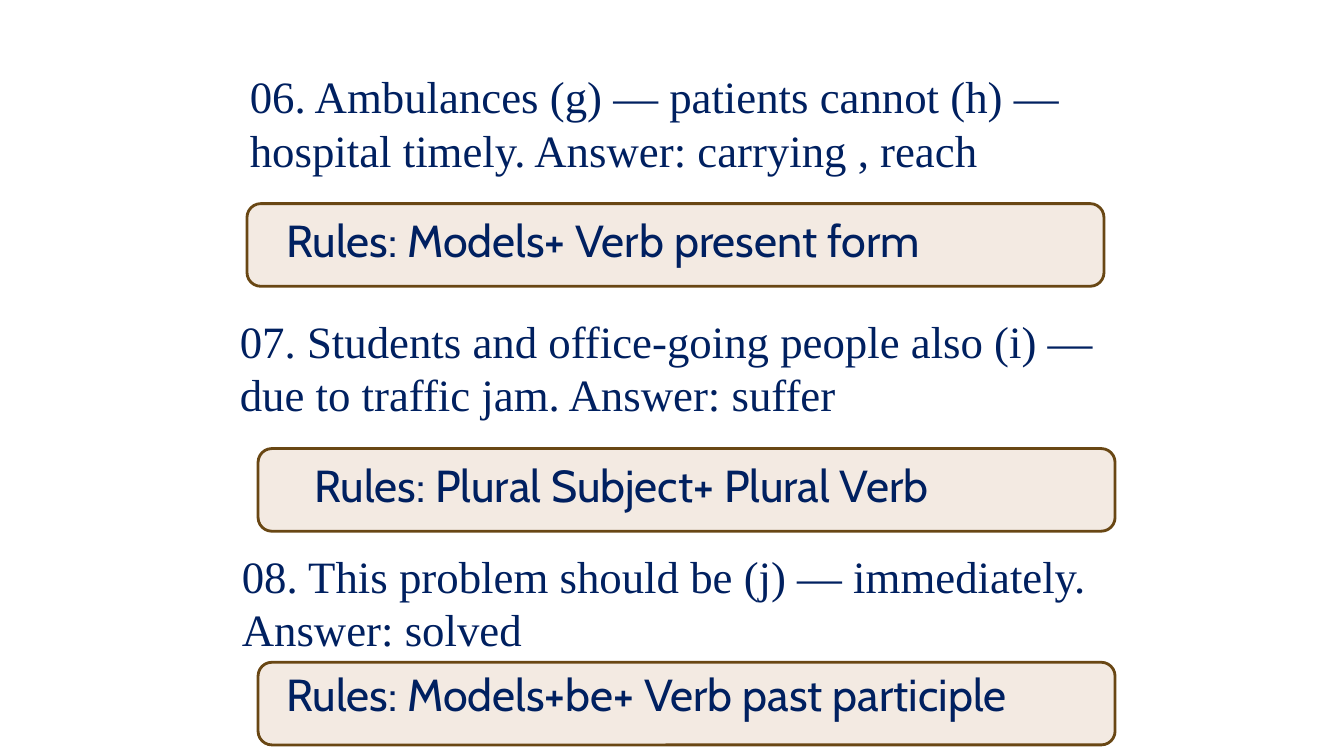
"""Build a grammar slide with three questions, each followed by its rule."""
from dataclasses import dataclass

from pptx import Presentation
from pptx.dml.color import RGBColor
from pptx.enum.shapes import MSO_SHAPE as Shape
from pptx.enum.text import MSO_AUTO_SIZE as AutoSize
from pptx.slide import Slide
from pptx.util import Inches, Pt

NAVY = "002060"
CREAM = "F3EAE2"
BROWN = "694714"
PANEL_WIDTH, PANEL_HEIGHT = 8.5, 0.82
QUESTION_HEIGHT, RULE_HEIGHT = 1.18, 0.64


@dataclass(frozen=True)
class Box:
    left: float
    top: float
    width: float
    height: float


@dataclass(frozen=True)
class Exercise:
    question: str
    question_box: Box
    panel_box: Box
    rule: str
    rule_box: Box


EXERCISES = [
    Exercise(
        "06. Ambulances (g) — patients cannot (h) — hospital timely. Answer: carrying , reach",
        Box(2.38, 0.63, 8.94, QUESTION_HEIGHT),
        Box(2.45, 2.02, PANEL_WIDTH, PANEL_HEIGHT),
        "Rules: Models+ Verb present form",
        Box(2.74, 2.06, 7.47, RULE_HEIGHT),
    ),
    Exercise(
        "07. Students and office-going people also (i) — due to traffic jam. Answer: suffer",
        Box(2.28, 3.06, 8.78, QUESTION_HEIGHT),
        Box(2.56, 4.45, PANEL_WIDTH, PANEL_HEIGHT),
        "Rules: Plural Subject+ Plural Verb",
        Box(3.02, 4.49, 7.47, RULE_HEIGHT),
    ),
    Exercise(
        "08. This problem should be (j) — immediately. Answer: solved",
        Box(2.3, 5.39, 9.1, QUESTION_HEIGHT),
        Box(2.56, 6.57, PANEL_WIDTH, PANEL_HEIGHT),
        "Rules: Models+be+ Verb past participle",
        Box(2.74, 6.57, 8.2, RULE_HEIGHT),
    ),
]


def color(value: str) -> RGBColor:
    return RGBColor.from_string(value)


def lengths(box: Box) -> list[Inches]:
    return [Inches(value) for value in (box.left, box.top, box.width, box.height)]


def add_panel(slide: Slide, box: Box) -> None:
    shape = slide.shapes.add_shape(Shape.ROUNDED_RECTANGLE, *lengths(box))
    shape.shadow.inherit = False
    shape.fill.solid()
    shape.fill.fore_color.rgb = color(CREAM)
    shape.line.color.rgb = color(BROWN)
    shape.line.width = Pt(2)


def add_text(slide: Slide, text: str, box: Box, *, font: str,
             size: float = 32, fill: str = NAVY) -> None:
    frame = slide.shapes.add_textbox(*lengths(box)).text_frame
    frame.word_wrap = True
    frame.auto_size = AutoSize.SHAPE_TO_FIT_TEXT
    run = frame.paragraphs[0].add_run()
    run.text = text
    run.font.name = font
    run.font.size = Pt(size)
    run.font.color.rgb = color(fill)


def main() -> None:
    presentation = Presentation()
    presentation.slide_width = Inches(13.33)
    presentation.slide_height = Inches(7.5)
    slide = presentation.slides.add_slide(presentation.slide_layouts[6])
    for exercise in EXERCISES:
        add_panel(slide, exercise.panel_box)
        add_text(slide, exercise.question, exercise.question_box, font="Times New Roman")
        add_text(slide, exercise.rule, exercise.rule_box, font="Cabin")
    presentation.save("out.pptx")


if __name__ == "__main__":
    main()
